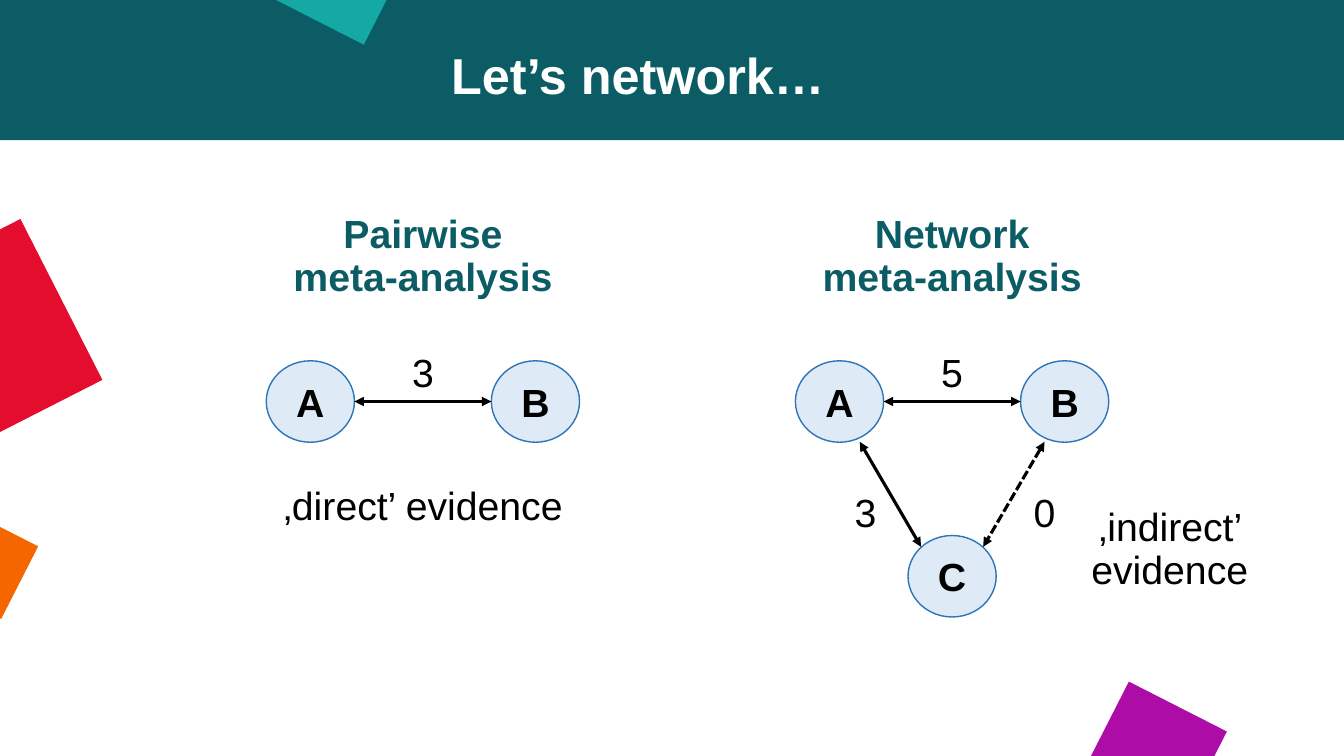
from dataclasses import dataclass

from lxml import etree
from pptx import Presentation
from pptx.dml.color import RGBColor
from pptx.enum.dml import MSO_LINE
from pptx.enum.shapes import MSO_CONNECTOR, MSO_SHAPE
from pptx.enum.text import MSO_ANCHOR, MSO_AUTO_SIZE, PP_ALIGN
from pptx.oxml.ns import qn
from pptx.util import Inches, Pt

RECTANGLE, OVAL = MSO_SHAPE.RECTANGLE, MSO_SHAPE.OVAL
STRAIGHT = MSO_CONNECTOR.STRAIGHT
DASHED = MSO_LINE.SQUARE_DOT
CENTER = PP_ALIGN.CENTER
TOP, MIDDLE = MSO_ANCHOR.TOP, MSO_ANCHOR.MIDDLE
NO_FIT = MSO_AUTO_SIZE.NONE

SLIDE_WIDTH, SLIDE_HEIGHT = Inches(13.333), Inches(7.5)
COLUMNS, ROWS = 160, 90
NODE_WIDTH, NODE_HEIGHT = 10.5, 9.7
NODE_OFFSET = 13.4
PAIR_ROW, APEX_ROW = 22.8, 43.6


@dataclass(frozen=True)
class Theme:
    """Colours, font and type sizes of the deck."""

    font: str = "Arial"
    title_size: int = 36
    body_size: int = 28
    petrol: str = "0C5C65"
    red: str = "E50D2E"
    purple: str = "AD0DA6"
    orange: str = "F56600"
    teal: str = "15A9A6"
    node_fill: str = "DEEBF7"
    node_line: str = "2E75B6"
    black: str = "000000"
    white: str = "FFFFFF"


THEME = Theme()


def across(columns):
    """Turn grid columns into a slide length."""
    return round(SLIDE_WIDTH * columns / COLUMNS)


def down(rows):
    """Turn grid rows into a slide length."""
    return round(SLIDE_HEIGHT * rows / ROWS)


def place(left, top, width, height):
    """Turn a grid box into slide lengths."""
    return across(left), down(top), across(width), down(height)


def write(box, text, size=THEME.body_size, color=THEME.black, bold=False,
          anchor=TOP, spacing=0.9):
    """Write centred text into a shape."""
    frame = box.text_frame
    frame.word_wrap = True
    frame.auto_size = NO_FIT
    frame.vertical_anchor = anchor
    para = frame.paragraphs[0]
    para.text = text
    para.alignment = CENTER
    para.line_spacing = spacing
    for span in para.runs:
        span.font.name = THEME.font
        span.font.size = Pt(size)
        span.font.bold = bold
        span.font.color.rgb = RGBColor.from_string(color)


def add_label(page, center, top, width, height, text, **style):
    """Add a text box centred on a grid column."""
    box = page.shapes.add_textbox(*place(center - width / 2, top, width, height))
    write(box, text, **style)


def add_block(page, left, top, width, height, color, rotation=0):
    """Add a plain coloured rectangle."""
    block = page.shapes.add_shape(RECTANGLE, *place(left, top, width, height))
    block.shadow.inherit = False
    block.fill.solid()
    block.fill.fore_color.rgb = RGBColor.from_string(color)
    block.line.fill.background()
    block.rotation = rotation


def add_node(page, center, middle, name):
    """Add a treatment node around a grid point."""
    node = page.shapes.add_shape(OVAL, *place(
        center - NODE_WIDTH / 2, middle - NODE_HEIGHT / 2, NODE_WIDTH, NODE_HEIGHT))
    node.shadow.inherit = False
    node.fill.solid()
    node.fill.fore_color.rgb = RGBColor.from_string(THEME.node_fill)
    node.line.color.rgb = RGBColor.from_string(THEME.node_line)
    node.line.width = Pt(1)
    write(node, name, bold=True, anchor=MIDDLE, spacing=1.0)


def add_arrow(page, start, end, dash=None):
    """Add a double-headed arrow between two grid points."""
    arrow = page.shapes.add_connector(
        STRAIGHT, across(start[0]), down(start[1]), across(end[0]), down(end[1]))
    arrow.line.color.rgb = RGBColor.from_string(THEME.black)
    arrow.line.width = Pt(2.25)
    if dash is not None:
        arrow.line.dash_style = dash
    properties = arrow.element.spPr
    outline = properties.find(qn("a:ln"))
    for tip in ("a:headEnd", "a:tailEnd"):
        etree.SubElement(outline, qn(tip), type="triangle")
    etree.SubElement(properties, qn("a:effectLst"))


def add_header(page, title):
    """Add the coloured blocks and place the title over the band."""
    add_block(page, 0, 0, COLUMNS, 16.7, THEME.petrol)
    add_block(page, -13.1, 29.8, 21.6, 21.5, THEME.red, rotation=333)
    add_block(page, 130.7, 83.4, 13.1, 13.1, THEME.purple, rotation=27)
    add_block(page, -7.3, 62.2, 10.2, 9.7, THEME.orange, rotation=27)
    add_block(page, 34.9, -8.8, 11.8, 12.1, THEME.teal, rotation=27)
    heading = page.shapes.title
    heading.left, heading.top, heading.width, heading.height = place(32.2, 5.5, 87.5, 4.9)
    write(heading, title, size=THEME.title_size, color=THEME.white, bold=True)
    page.shapes.element.append(heading.element)


def add_pair(page, box, heading, count):
    """Add a heading and the compared nodes A and B."""
    left, top, width = box
    center, middle = left + width / 2, top + PAIR_ROW
    add_label(page, center, top, width, 10.7, heading, color=THEME.petrol, bold=True)
    for side, name in ((-1, "A"), (1, "B")):
        add_node(page, center + side * NODE_OFFSET, middle, name)
    reach = NODE_OFFSET - NODE_WIDTH / 2
    add_arrow(page, (center - reach, middle), (center + reach, middle))
    add_label(page, center, top + 16.5, 8.2, 6.2, count)


def add_pairwise_panel(page, box):
    """Add the pairwise comparison with its evidence note."""
    left, top, width = box
    add_pair(page, box, "Pairwise\vmeta-analysis", "3")
    add_label(page, left + width / 2, top + 32.4, 36.7, 6.2, "‚direct’ evidence")


def add_network_panel(page, box):
    """Add the three-node network with its evidence note."""
    left, top, width = box
    center = left + width / 2
    add_pair(page, box, "Network\vmeta-analysis", "5")
    add_node(page, center, top + APEX_ROW, "C")
    for side, offset, count, dash in ((-1, -10.3, "3", None), (1, 11, "0", DASHED)):
        add_arrow(page, (center + side * 11, top + 27.6),
                  (center + side * 3.7, top + APEX_ROW - 3.5), dash)
        add_label(page, center + offset, top + 33.2, 8.2, 6.2, count)
    add_label(page, center + 25.9, top + 34.9, 27.2, 6.2, "‚indirect’ evidence")


def main():
    """Build and save the deck."""
    deck = Presentation()
    deck.slide_width, deck.slide_height = SLIDE_WIDTH, SLIDE_HEIGHT
    page = deck.slides.add_slide(deck.slide_layouts.get_by_name("Title Only"))
    add_header(page, "Let’s network…")
    add_pairwise_panel(page, (23.1, 25, 54.5))
    add_network_panel(page, (86.1, 25, 54.5))
    deck.save("out.pptx")


if __name__ == "__main__":
    main()
